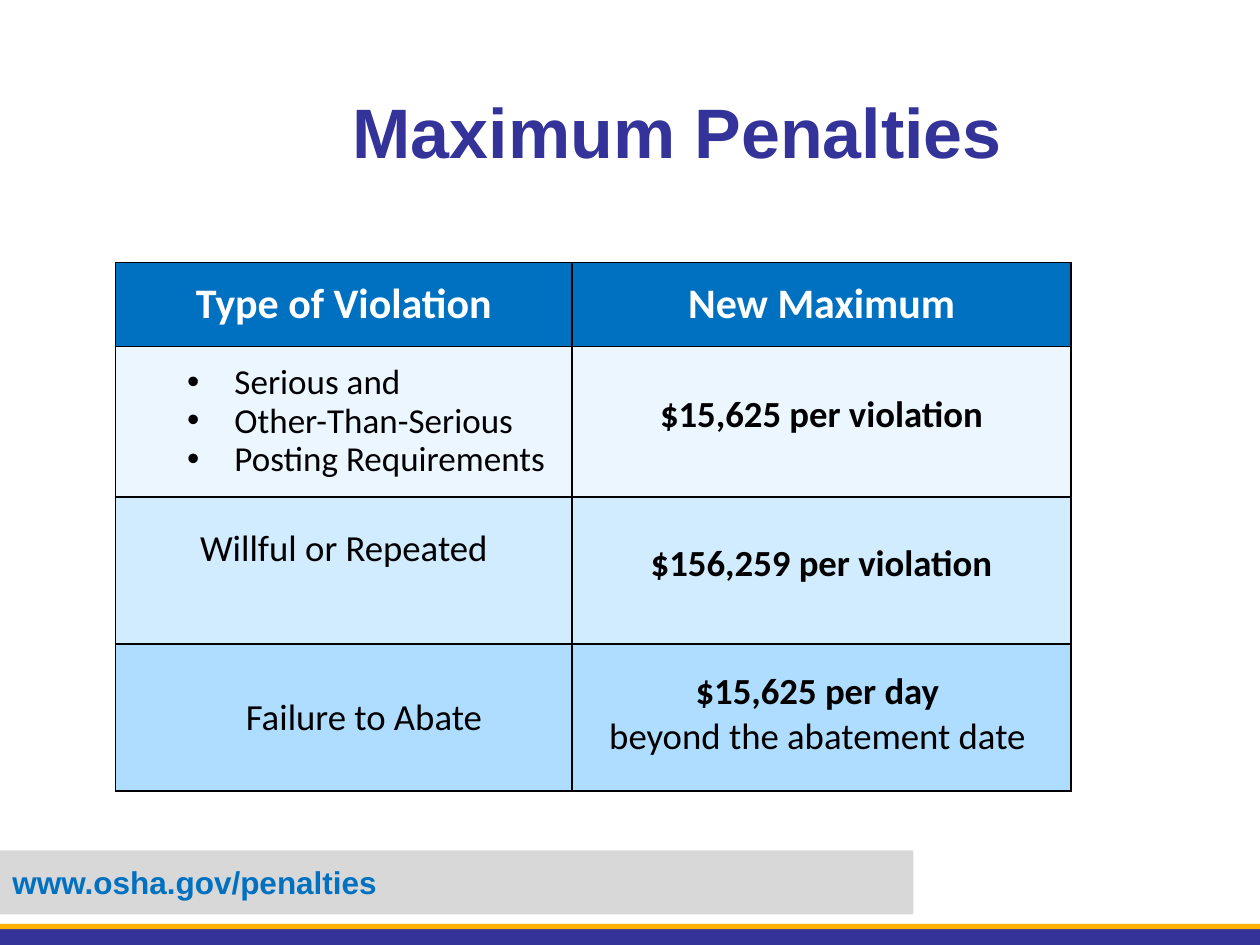
from dataclasses import dataclass

from lxml import etree
from pptx import Presentation
from pptx.dml.color import RGBColor
from pptx.enum.shapes import MSO_SHAPE
from pptx.enum.text import MSO_ANCHOR, PP_ALIGN
from pptx.oxml.ns import qn
from pptx.util import Pt

RECTANGLE = MSO_SHAPE.RECTANGLE
TOP, MIDDLE = MSO_ANCHOR.TOP, MSO_ANCHOR.MIDDLE
LEFT, CENTER = PP_ALIGN.LEFT, PP_ALIGN.CENTER


@dataclass(frozen=True)
class Theme:
    navy: str = "333399"
    gold: str = "FFB300"
    blue: str = "0070C0"
    gray: str = "404040"
    white: str = "FFFFFF"
    black: str = "000000"
    row_fills: tuple = ("0070C0", "EBF6FF", "D1EBFF", "AFDDFF")
    heading_font: str = "Arial"
    table_font: str = "Calibri"
    title_size: int = 40
    header_size: int = 24
    body_size: int = 21
    list_size: int = 20
    link_size: int = 18


@dataclass(frozen=True)
class Entry:
    lines: tuple
    bold: bool = False
    bulleted: bool = False
    lift: float = 0
    shift: float = 0


class SlideBuilder:
    def __init__(self, slide, theme):
        self.slide = slide
        self.theme = theme

    def add_run(self, paragraph, text, font, size, color, bold):
        run = paragraph.add_run()
        run.text = text
        run.font.name = font
        run.font.size = Pt(size)
        run.font.bold = bold
        run.font.color.rgb = RGBColor.from_string(color)

    def bar(self, left, top, width, height, color, opacity=None):
        bar = self.slide.shapes.add_shape(
            RECTANGLE, Pt(left), Pt(top), Pt(width), Pt(height))
        bar.shadow.inherit = False
        bar.fill.solid()
        bar.fill.fore_color.rgb = RGBColor.from_string(color)
        bar.line.fill.background()
        if opacity is not None:
            shade = bar.fill._xPr.find(f".//{qn('a:srgbClr')}")
            etree.SubElement(shade, qn("a:alpha"), val=str(opacity * 1000))
        return bar

    def title(self, text, left, top, width, height):
        title = self.slide.shapes.add_textbox(
            Pt(left), Pt(top), Pt(width), Pt(height))
        frame = title.text_frame
        frame.word_wrap = True
        frame.vertical_anchor = TOP
        paragraph = frame.paragraphs[0]
        paragraph.alignment = CENTER
        self.add_run(paragraph, text, self.theme.heading_font,
                     self.theme.title_size, self.theme.navy, True)

    def link_bar(self, text, left, top, width, height):
        bar = self.bar(left, top, width, height, self.theme.gray, opacity=20)
        frame = bar.text_frame
        frame.word_wrap = True
        frame.vertical_anchor = MIDDLE
        paragraph = frame.paragraphs[0]
        paragraph.alignment = LEFT
        self.add_run(paragraph, text, self.theme.heading_font,
                     self.theme.link_size, self.theme.blue, True)

    def bullet(self, paragraph):
        properties = paragraph._p.get_or_add_pPr()
        properties.set("marL", str(Pt(63)))
        properties.set("indent", str(Pt(-27)))
        paragraph.line_spacing = 0.9
        etree.SubElement(properties, qn("a:buFont"), typeface="Arial")
        etree.SubElement(properties, qn("a:buChar"), char="•")

    def border(self, cell):
        properties = cell._tc.get_or_add_tcPr()
        for position, side in enumerate(("lnL", "lnR", "lnT", "lnB")):
            line = etree.Element(qn(f"a:{side}"), w=str(Pt(1)))
            fill = etree.SubElement(line, qn("a:solidFill"))
            etree.SubElement(fill, qn("a:srgbClr"), val=self.theme.black)
            properties.insert(position, line)

    def fill_cell(self, cell, entry, fill, is_header):
        theme = self.theme
        cell.fill.solid()
        cell.fill.fore_color.rgb = RGBColor.from_string(fill)
        self.border(cell)
        cell.vertical_anchor = MIDDLE
        cell.margin_left, cell.margin_right = Pt(5 + entry.shift), Pt(5)
        cell.margin_top, cell.margin_bottom = Pt(0), Pt(entry.lift)
        size = theme.list_size if entry.bulleted else theme.body_size
        size = theme.header_size if is_header else size
        color = theme.white if is_header else theme.black
        frame = cell.text_frame
        for index, text in enumerate(entry.lines):
            if index == 0:
                paragraph = frame.paragraphs[0]
            elif entry.bulleted:
                paragraph = frame.add_paragraph()
            else:
                paragraph.add_line_break()
            if entry.bulleted:
                paragraph.alignment = LEFT
                self.bullet(paragraph)
            else:
                paragraph.alignment = CENTER
            self.add_run(paragraph, text, theme.table_font, size, color,
                         entry.bold and (index == 0 or entry.bulleted))

    def table(self, rows, left, top, widths, heights):
        table = self.slide.shapes.add_table(
            len(rows), len(widths), Pt(left), Pt(top),
            Pt(sum(widths)), Pt(sum(heights))).table
        table.first_row = table.horz_banding = False
        for column, width in zip(table.columns, widths):
            column.width = Pt(width)
        for row, height in zip(table.rows, heights):
            row.height = Pt(height)
        for r, (entries, fill) in enumerate(zip(rows, self.theme.row_fills)):
            for c, entry in enumerate(entries):
                self.fill_cell(table.cell(r, c), entry, fill, r == 0)


PENALTIES = (
    (Entry(("Type of Violation",), bold=True),
     Entry(("New Maximum",), bold=True)),
    (Entry(("Serious and", "Other-Than-Serious", "Posting Requirements"),
           bulleted=True),
     Entry(("$15,625 per violation",), bold=True, lift=8)),
    (Entry(("Willful or Repeated",), lift=25),
     Entry(("$156,259 per violation",), bold=True, lift=7)),
    (Entry(("Failure to Abate",), shift=23),
     Entry(("$15,625 per day ", "beyond the abatement date "),
           bold=True, lift=3)),
)


def main():
    presentation = Presentation()
    presentation.slide_width, presentation.slide_height = Pt(720), Pt(540)
    theme = Theme()
    slide = presentation.slides.add_slide(presentation.slide_layouts[6])
    builder = SlideBuilder(slide, theme)
    builder.bar(0, 528, 720, 12, theme.navy)
    builder.bar(0, 528, 720, 3, theme.gold)
    builder.title("Maximum Penalties", 132, 47, 510, 90)
    builder.table(PENALTIES, 66, 150, (261, 285), (48, 86, 84, 84))
    builder.link_bar("www.osha.gov/penalties", 0, 486, 522, 36.5)
    presentation.save("out.pptx")


if __name__ == "__main__":
    main()
